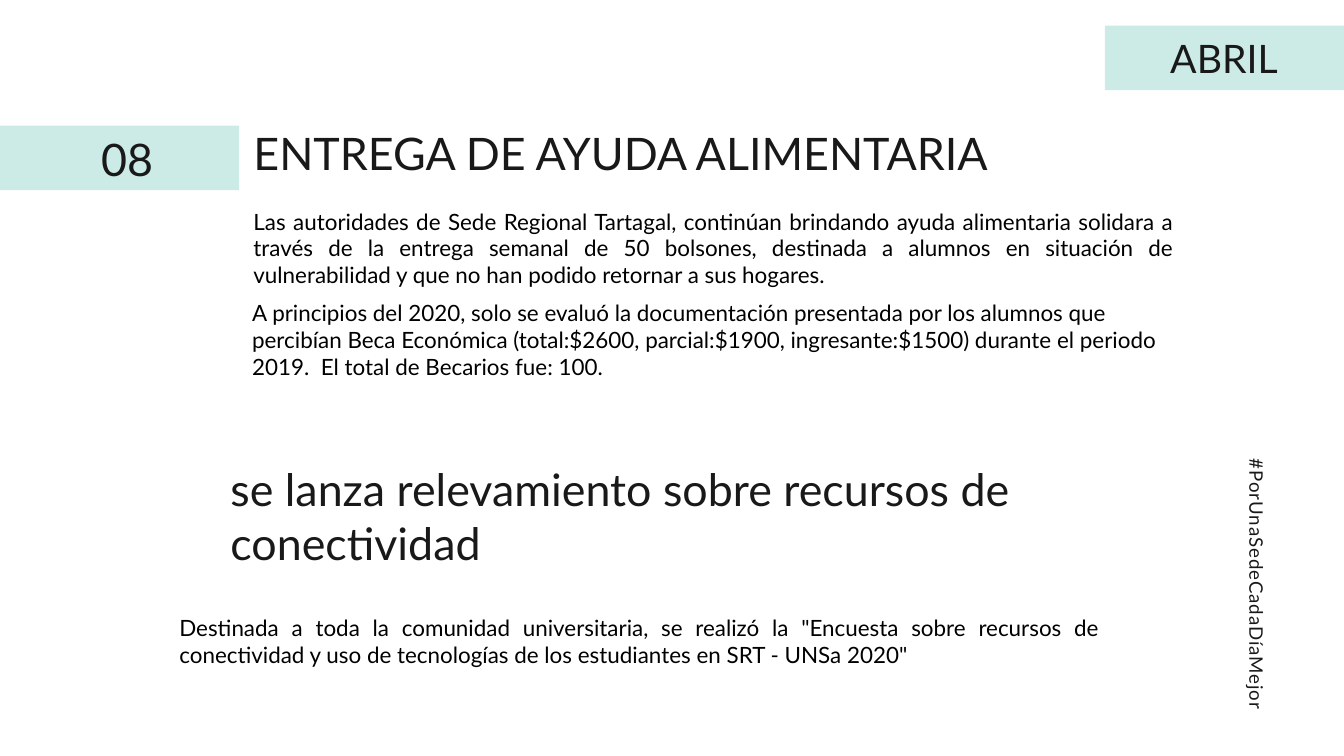
from dataclasses import dataclass

import pptx
import pptx.dml.color
import pptx.enum.shapes
import pptx.enum.text
import pptx.util

Cm = pptx.util.Cm
Pt = pptx.util.Pt
Align = pptx.enum.text.PP_ALIGN


@dataclass(frozen=True)
class Box:
    left: float
    top: float
    width: float
    height: float

    def inner(self, left, top, width, height):
        return Box(self.left + left, self.top + top, width, height)

    def lengths(self):
        return Cm(self.left), Cm(self.top), Cm(self.width), Cm(self.height)


@dataclass(frozen=True)
class TextStyle:
    size: float
    color: str
    leading: float


@dataclass(frozen=True)
class Theme:
    font: str = "Lato"
    mint: str = "CCEBE6"
    heading: TextStyle = TextStyle(48, "191919", 57.6)
    month: TextStyle = TextStyle(42, "191919", 50.4)
    body: TextStyle = TextStyle(24, "000000", 28.8)
    hashtag: TextStyle = TextStyle(20, "191919", 28)


THEME = Theme()


def color(value):
    return pptx.dml.color.RGBColor.from_string(value)


def add_text(page, box, text, style, align=Align.LEFT, fixed_leading=True):
    shape = page.shapes.add_textbox(*box.lengths())
    frame = shape.text_frame
    frame.word_wrap = True
    frame.auto_size = pptx.enum.text.MSO_AUTO_SIZE.SHAPE_TO_FIT_TEXT
    frame.margin_left = frame.margin_right = 0
    frame.margin_top = frame.margin_bottom = 0
    para = frame.paragraphs[0]
    para.text = text
    para.alignment = align
    if fixed_leading:
        para.line_spacing = Pt(style.leading)
    para.font.name = THEME.font
    para.font.size = Pt(style.size)
    para.font.color.rgb = color(style.color)
    return shape


def add_band(page, box, label, label_box, style):
    band = page.shapes.add_shape(
        pptx.enum.shapes.MSO_SHAPE.RECTANGLE, *box.lengths())
    band.shadow.inherit = False
    band.fill.solid()
    band.fill.fore_color.rgb = color(THEME.mint)
    band.line.fill.background()
    add_text(page, label_box, label, style, Align.CENTER)


def add_month(page, box, month):
    add_band(page, box, month, box.inner(1.24, 0.33, 6.53, 1.78), THEME.month)


def add_food_aid(page, box):
    add_band(page, box.inner(0, 0, 9.04, 2.44), "08",
             box.inner(2.84, 0.23, 3.94, 2.01), THEME.heading)
    add_text(page, box.inner(9.58, 0, 32.18, 2.01),
             "ENTREGA DE AYUDA ALIMENTARIA", THEME.heading)
    add_text(page, box.inner(9.58, 3.1, 34.75, 3.05),
             "Las autoridades de Sede Regional Tartagal, continúan brindando "
             "ayuda alimentaria solidara a través de la entrega semanal de 50 "
             "bolsones, destinada a alumnos en situación de vulnerabilidad y "
             "que no han podido retornar a sus hogares.",
             THEME.body, Align.JUSTIFY)
    add_text(page, box.inner(9.53, 6.56, 34.24, 3.07),
             "A principios del 2020, solo se evaluó la documentación "
             "presentada por los alumnos que percibían Beca Económica "
             "(total:$2600, parcial:$1900, ingresante:$1500) durante el "
             "periodo 2019.  El total de Becarios fue: 100.",
             THEME.body, fixed_leading=False)


def add_survey(page, box):
    add_text(page, box.inner(1.93, 0, 32.18, 4.01),
             "se lanza relevamiento sobre recursos de conectividad",
             THEME.heading)
    add_text(page, box.inner(0, 5.77, 34.75, 2.03),
             "Destinada a toda la comunidad universitaria, se realizó la "
             "\"Encuesta sobre recursos de conectividad y uso de tecnologías "
             "de los estudiantes en SRT - UNSa 2020\"",
             THEME.body, Align.JUSTIFY)


def add_hashtag(page, box, hashtag):
    shape = add_text(page, box, hashtag, THEME.hashtag, Align.RIGHT)
    shape.rotation = 90
    span = shape.text_frame.paragraphs[0].runs[0]
    span.font._element.set("spc", "100")


def main():
    deck = pptx.Presentation()
    deck.slide_width = Cm(50.8)
    deck.slide_height = Cm(28.58)
    page = deck.slides.add_slide(deck.slide_layouts[6])
    add_month(page, Box(41.76, 0.97, 9.04, 2.44), "ABRIL")
    add_food_aid(page, Box(0, 4.75, 44.33, 9.63))
    add_survey(page, Box(6.78, 17.45, 34.75, 7.8))
    add_hashtag(page, Box(40.28, 19.02, 14.61, 0.97),
                "#PorUnaSedeCadaDíaMejor")
    deck.save("out.pptx")


if __name__ == "__main__":
    main()
